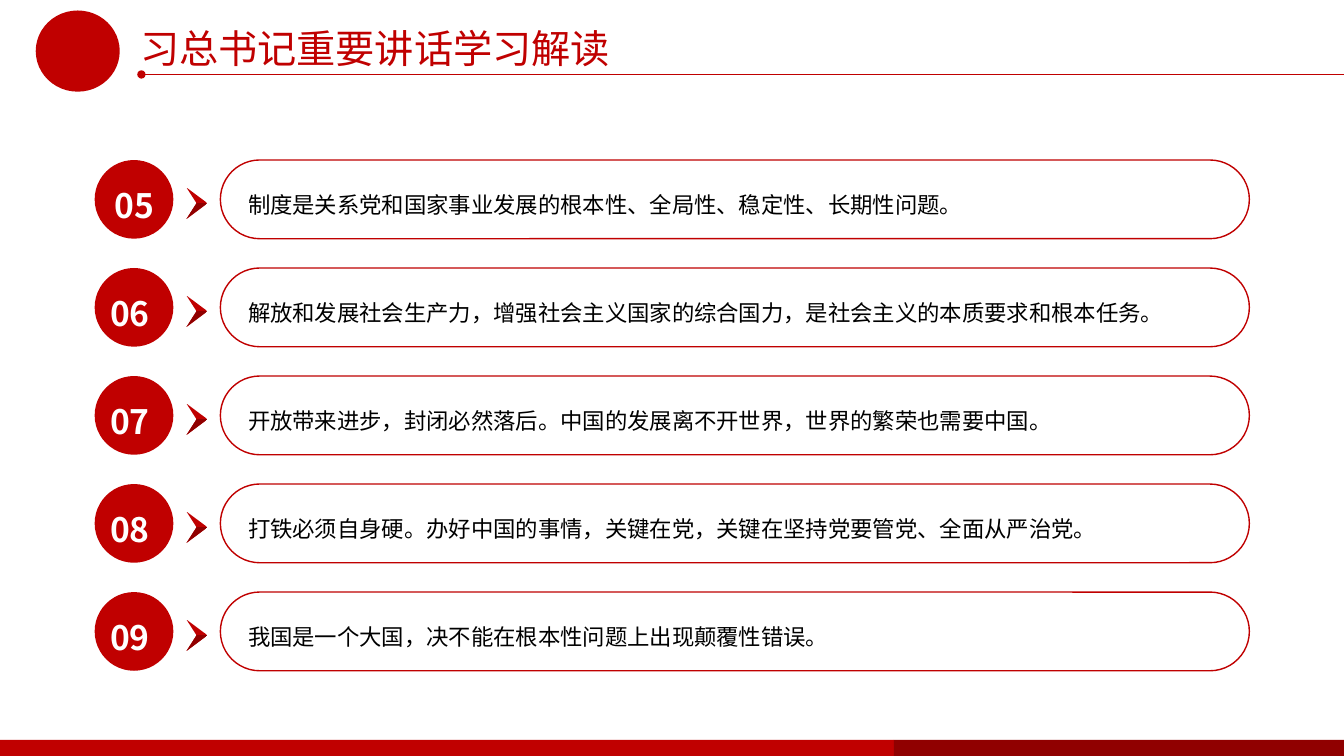
from copy import deepcopy

from lxml.etree import SubElement
from pptx import Presentation
from pptx.dml.color import RGBColor
from pptx.enum.shapes import MSO_CONNECTOR, MSO_SHAPE
from pptx.enum.text import MSO_ANCHOR, PP_ALIGN
from pptx.oxml.ns import qn
from pptx.util import Pt

RED, DARK_RED, WHITE, BLACK = "C00000", "900000", "FFFFFF", "000000"
HEADING_FONT, BODY_FONT = "Noto Sans CJK SC", "Arial"
WIDTH, HEIGHT = 960, 540

STATEMENTS = [
    "制度是关系党和国家事业发展的根本性、全局性、稳定性、长期性问题。",
    "解放和发展社会生产力，增强社会主义国家的综合国力，是社会主义的本质要求和根本任务。",
    "开放带来进步，封闭必然落后。中国的发展离不开世界，世界的繁荣也需要中国。",
    "打铁必须自身硬。办好中国的事情，关键在党，关键在坚持党要管党、全面从严治党。",
    "我国是一个大国，决不能在根本性问题上出现颠覆性错误。",
]
FIRST_NUMBER = 5
FIRST_TOP, ROW_PITCH, ROW_HEIGHT = 114.3, 77.15, 56.2


def rgb(value):
    return RGBColor.from_string(value)


class SlideBuilder:
    def __init__(self, slide):
        self.shapes = slide.shapes

    def shape(self, kind, left, top, width, height, fill=None, line=None):
        shape = self.shapes.add_shape(kind, Pt(left), Pt(top), Pt(width), Pt(height))
        shape.shadow.inherit = False
        if fill:
            shape.fill.solid()
            shape.fill.fore_color.rgb = rgb(fill)
        else:
            shape.fill.background()
        if line:
            shape.line.color.rgb = rgb(line)
            shape.line.width = Pt(1)
        else:
            shape.line.fill.background()
        return shape

    def text(self, words, left, top, width, height, size, color, font,
             bold=False, align=PP_ALIGN.LEFT, anchor=MSO_ANCHOR.TOP,
             spacing=1.0, inset=True):
        box = self.shapes.add_textbox(Pt(left), Pt(top), Pt(width), Pt(height))
        frame = box.text_frame
        frame.word_wrap = True
        frame.vertical_anchor = anchor
        if not inset:
            frame.margin_left = frame.margin_right = 0
            frame.margin_top = frame.margin_bottom = 0
        paragraph = frame.paragraphs[0]
        paragraph.text = words
        paragraph.alignment = align
        paragraph.line_spacing = spacing
        paragraph.font.size = Pt(size)
        paragraph.font.name = font
        paragraph.font.bold = bold
        paragraph.font.color.rgb = rgb(color)

    def dotted_rule(self, left, right, y):
        """Horizontal line that starts with a round dot."""
        rule = self.shapes.add_connector(
            MSO_CONNECTOR.STRAIGHT, Pt(left), Pt(y), Pt(right), Pt(y))
        rule.line.color.rgb = rgb(RED)
        rule.line.width = Pt(1)
        SubElement(rule.line._get_or_add_ln(), qn("a:headEnd"), type="oval")
        SubElement(rule._element.spPr, qn("a:effectLst"))

    def chevron(self, left, top, width=15, height=22.4, notch=7.2):
        """Notched arrowhead, red above its axis and dark red below."""
        middle = top + height / 2
        outline = self.shapes.build_freeform(Pt(left + width), Pt(middle))
        outline.add_line_segments([
            (Pt(left), Pt(top)),
            (Pt(left + notch), Pt(middle)),
            (Pt(left), Pt(top + height)),
        ], close=True)
        arrow = outline.convert_to_shape()
        arrow.shadow.inherit = False
        arrow.line.fill.background()
        arrow.fill.gradient()
        arrow.fill.gradient_angle = 270
        stop_list = arrow._element.spPr.find(".//" + qn("a:gsLst"))
        stop_list.extend([deepcopy(stop) for stop in stop_list])
        bands = [(0, RED), (0.5, RED), (0.5, DARK_RED), (1, DARK_RED)]
        for stop, (position, color) in zip(arrow.fill.gradient_stops, bands):
            stop.position = position
            stop.color.rgb = rgb(color)

    def header(self, title):
        self.dotted_rule(101, WIDTH, 53.2)
        self.shape(MSO_SHAPE.OVAL, 25.5, 7.5, 60, 58, fill=RED)
        self.text(title, 93, 13.7, 360, 41, 28, RED, HEADING_FONT)

    def footer(self, split=638.5, top=528.5):
        for left, right, color in [(0, split, RED), (split, WIDTH, DARK_RED)]:
            self.shape(MSO_SHAPE.RECTANGLE, left, top, right - left,
                       HEIGHT - top, fill=color)

    def statement_row(self, number, statement, top, number_left):
        pill = self.shape(MSO_SHAPE.ROUNDED_RECTANGLE, 157.4, top, 735,
                          ROW_HEIGHT, line=RED)
        pill.adjustments[0] = 0.5
        self.text(statement, 177.2, top + 16.2, 700, 23, 16, BLACK, BODY_FONT,
                  spacing=1.3, inset=False)
        self.shape(MSO_SHAPE.OVAL, 67.6, top, ROW_HEIGHT, ROW_HEIGHT, fill=RED)
        self.text(f"{number:02d}", number_left, top + 13.7, 49, 28.8, 24, WHITE,
                  HEADING_FONT, bold=True, align=PP_ALIGN.CENTER,
                  anchor=MSO_ANCHOR.MIDDLE, spacing=1.3)
        self.chevron(133.2, top + 19.7)


def main():
    deck = Presentation()
    deck.slide_width, deck.slide_height = Pt(WIDTH), Pt(HEIGHT)
    builder = SlideBuilder(deck.slides.add_slide(deck.slide_layouts[6]))
    builder.header("习总书记重要讲话学习解读")
    builder.footer()
    for row, statement in enumerate(STATEMENTS):
        number_left = 68.3 if row else 71.3
        builder.statement_row(FIRST_NUMBER + row, statement,
                              FIRST_TOP + row * ROW_PITCH, number_left)
    deck.save("out.pptx")


if __name__ == "__main__":
    main()
